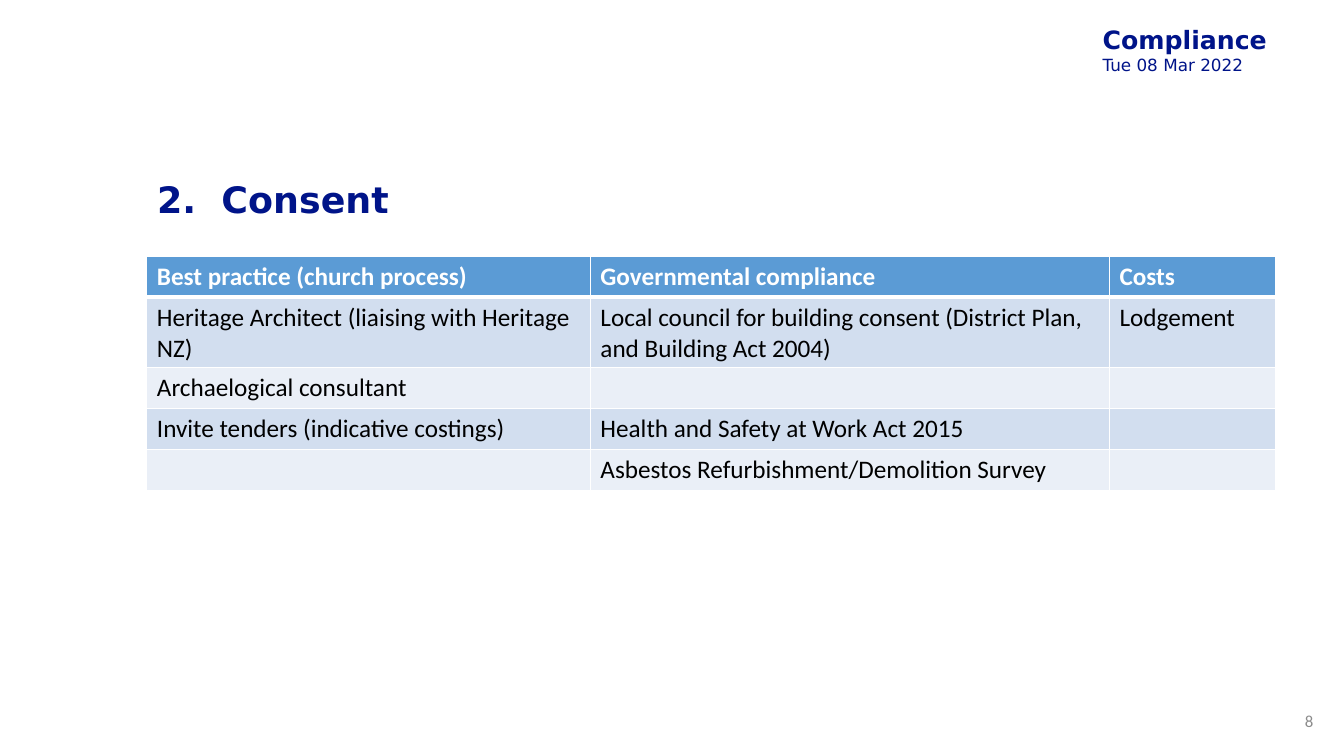
from lxml import etree
from pptx import Presentation
from pptx.dml.color import RGBColor
from pptx.enum.text import MSO_ANCHOR, PP_ALIGN
from pptx.oxml.ns import qn
from pptx.util import Pt

LEFT, RIGHT = PP_ALIGN.LEFT, PP_ALIGN.RIGHT
TOP, MIDDLE = MSO_ANCHOR.TOP, MSO_ANCHOR.MIDDLE

NAVY = RGBColor(0x00, 0x14, 0x89)
BLUE = RGBColor(0x5B, 0x9B, 0xD5)
PALE = RGBColor(0xD2, 0xDE, 0xEF)
MIST = RGBColor(0xEA, 0xEF, 0xF7)
GREY = RGBColor(0x8C, 0x8C, 0x8C)
WHITE = RGBColor(0xFF, 0xFF, 0xFF)
BLACK = RGBColor(0x00, 0x00, 0x00)

HEAD = "DejaVu Sans"
BODY = "Calibri"

COLS = [316.8, 370.8, 118.8]
ROW = 29.2
ROWS = [
    ["Best practice (church process)", "Governmental compliance", "Costs"],
    ["Heritage Architect (liaising with Heritage NZ)",
     "Local council for building consent (District Plan, and Building Act 2004)",
     "Lodgement"],
    ["Archaelogical consultant", "", ""],
    ["Invite tenders (indicative costings)", "Health and Safety at Work Act 2015", ""],
    ["", "Asbestos Refurbishment/Demolition Survey", ""],
]


class Deck:
    def __init__(self, wide, high):
        self.prs = Presentation()
        self.prs.slide_width, self.prs.slide_height = Pt(wide), Pt(high)
        self.slide = self.prs.slides.add_slide(self.prs.slide_layouts[6])

    def style(self, para, name, size, color, bold=False):
        look = {"name": name, "size": Pt(size), "bold": bold}
        for key, value in look.items():
            setattr(para.font, key, value)
        para.font.color.rgb = color

    def text(self, box, lines, wrap=True, anchor=TOP, align=LEFT, space=1.0, pad=(7.2, 3.6)):
        frame = self.slide.shapes.add_textbox(*map(Pt, box)).text_frame
        side, edge = map(Pt, pad)
        form = {
            "word_wrap": wrap, "vertical_anchor": anchor,
            "margin_left": side, "margin_right": side,
            "margin_top": edge, "margin_bottom": edge,
        }
        for key, value in form.items():
            setattr(frame, key, value)
        for i, (words, look) in enumerate(lines):
            para = frame.add_paragraph() if i else frame.paragraphs[0]
            para.text, para.alignment, para.line_spacing = words, align, space
            self.style(para, **look)

    def border(self, cell, widths):
        props = cell._tc.get_or_add_tcPr()
        for side, width in widths.items():
            line = etree.SubElement(props, qn(f"a:ln{side}"), w=str(Pt(width)))
            fill = etree.SubElement(line, qn("a:solidFill"))
            etree.SubElement(fill, qn("a:srgbClr"), val=str(WHITE))

    def table(self, left, top, cols, row, rows):
        size = (sum(cols), row * len(rows))
        frame = self.slide.shapes.add_table(
            len(rows), len(cols), Pt(left), Pt(top), *map(Pt, size))
        grid = frame.table
        for col, width in zip(grid.columns, cols):
            col.width = Pt(width)
        for r, words in enumerate(rows):
            grid.rows[r].height = Pt(row)
            first = r == 0
            shade = BLUE if first else PALE if r % 2 else MIST
            for c, word in enumerate(words):
                cell = grid.cell(r, c)
                self.border(cell, {"L": 1, "R": 1, "T": 3 if r == 1 else 1,
                                   "B": 3 if first else 1})
                cell.fill.solid()
                cell.fill.fore_color.rgb = shade
                cell.text = word
                self.style(cell.text_frame.paragraphs[0], BODY, 18,
                           WHITE if first else BLACK, first)


def main():
    deck = Deck(960, 540)
    deck.text((782.6, 14.4, 128.9, 63.4), [
        ("Compliance", {"name": HEAD, "size": 18, "color": NAVY, "bold": True}),
        ("Tue 08 Mar 2022", {"name": HEAD, "size": 12, "color": NAVY}),
    ], wrap=False, pad=(5, 2.9))
    deck.text((105.1, 108, 806.4, 72.7), [
        ("2.  Consent", {"name": HEAD, "size": 26, "color": NAVY, "bold": True}),
    ], anchor=MIDDLE, space=0.9)
    deck.table(104.9, 183.1, COLS, ROW, ROWS)
    deck.text((915.1, 500.4, 30.2, 28.8), [
        ("8", {"name": BODY, "size": 12, "color": GREY}),
    ], anchor=MIDDLE, align=RIGHT)
    deck.prs.save("out.pptx")


if __name__ == "__main__":
    main()
